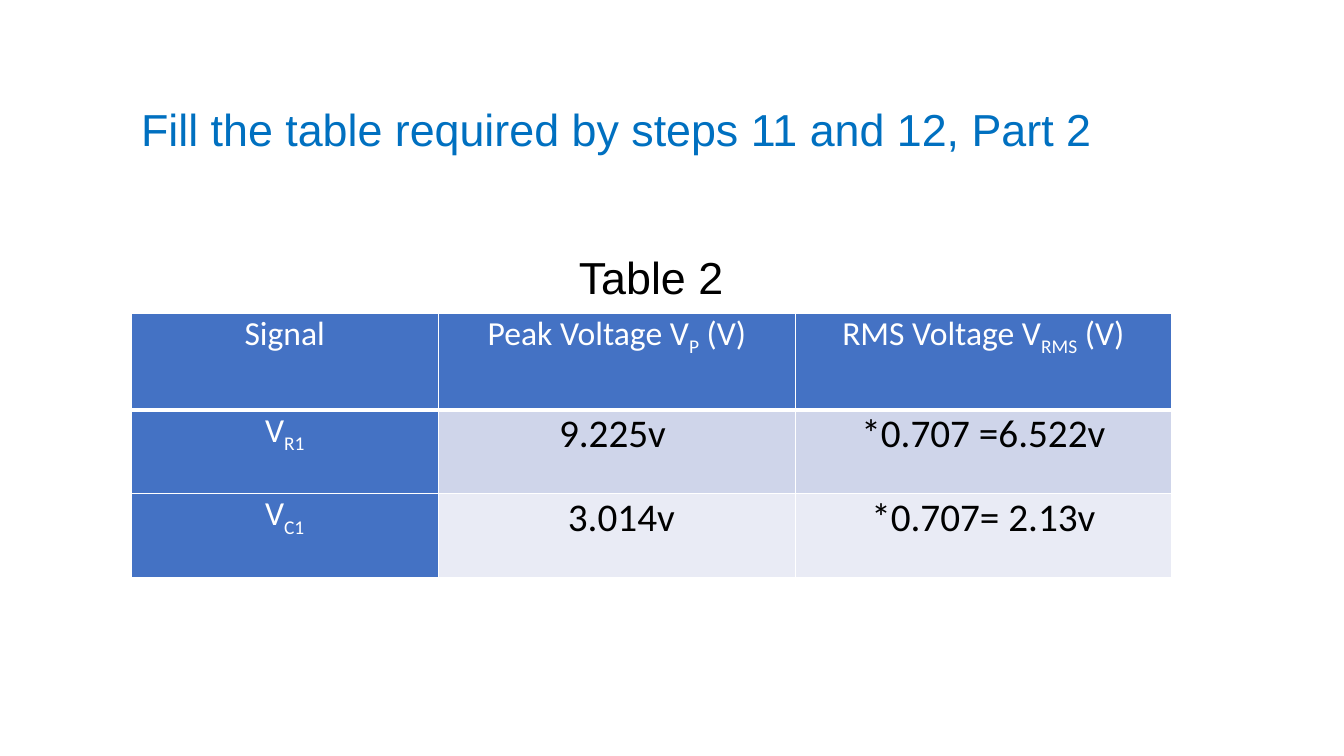
from lxml.etree import SubElement
from pptx import Presentation
from pptx.dml.color import RGBColor
from pptx.enum.text import MSO_ANCHOR, MSO_AUTO_SIZE, PP_ALIGN
from pptx.oxml.ns import qn
from pptx.util import Pt

WHITE = RGBColor(0xFF, 0xFF, 0xFF)
BLACK = RGBColor(0x00, 0x00, 0x00)
TITLE_BLUE = RGBColor(0x00, 0x70, 0xC0)
HEADER_BLUE = RGBColor(0x44, 0x72, 0xC4)
BAND_DARK = RGBColor(0xCF, 0xD5, 0xEA)
BAND_LIGHT = RGBColor(0xE9, 0xEB, 0xF5)

COLUMN_WIDTHS = (219.6, 254.9, 268.6)
ROW_HEIGHTS = (69.1, 59.8, 59.8)
READINGS = (
    (("Signal",), ("Peak Voltage V", "P", " (V)"), ("RMS Voltage V", "RMS", " (V)")),
    (("V", "R1"), ("9.225v ",), ("*0.707 =6.522v",)),
    (("V", "C1"), (" 3.014v",), ("*0.707= 2.13v",)),
)


def write(frame, *parts, size, color, font="Calibri", align=PP_ALIGN.CENTER, spacing=1.0):
    """Write one paragraph in which every second part is a subscript."""
    paragraph = frame.paragraphs[0]
    paragraph.alignment = align
    paragraph.line_spacing = spacing
    for index, part in enumerate(parts):
        run = paragraph.add_run()
        run.text = part
        run.font.size = Pt(size)
        run.font.name = font
        run.font.color.rgb = color
        if index % 2:
            run.font._element.set("baseline", "-25000")


def set_borders(cell, top, bottom):
    """Give a cell white borders, with the top and bottom widths in points."""
    properties = cell._tc.get_or_add_tcPr()
    for index, (side, width) in enumerate((("L", 1), ("R", 1), ("T", top), ("B", bottom))):
        border = SubElement(properties, qn(f"a:ln{side}"), w=str(Pt(width)))
        fill = SubElement(border, qn("a:solidFill"))
        SubElement(fill, qn("a:srgbClr"), val=str(WHITE))
        properties.insert(index, border)


def add_title(slide, left, top, width, height):
    """Place the slide title in the given box."""
    title = slide.shapes.title
    title.left, title.top, title.width, title.height = map(Pt, (left, top, width, height))
    frame = title.text_frame
    frame.auto_size = MSO_AUTO_SIZE.NONE
    frame.vertical_anchor = MSO_ANCHOR.MIDDLE
    write(frame, "Fill the table required by steps 11 and 12, Part 2", size=32,
          color=TITLE_BLUE, font="Arial", align=PP_ALIGN.LEFT, spacing=0.9)


def add_caption(slide, left, top, width, height):
    """Place the table caption in the given box."""
    caption = slide.shapes.add_textbox(Pt(left), Pt(top), Pt(width), Pt(height))
    frame = caption.text_frame
    frame.word_wrap = True
    frame.auto_size = MSO_AUTO_SIZE.SHAPE_TO_FIT_TEXT
    frame.vertical_anchor = MSO_ANCHOR.MIDDLE
    write(frame, "Table 2", size=32, color=BLACK, font="Arial")


def add_readings(slide, left, top):
    """Place the table of voltage readings with its corner at the given point."""
    table = slide.shapes.add_table(
        len(ROW_HEIGHTS), len(COLUMN_WIDTHS), Pt(left), Pt(top),
        Pt(sum(COLUMN_WIDTHS)), Pt(sum(ROW_HEIGHTS))).table
    table.first_row = table.horz_banding = False
    for column, width in zip(table.columns, COLUMN_WIDTHS):
        column.width = Pt(width)
    for row_index, (row, height) in enumerate(zip(table.rows, ROW_HEIGHTS)):
        row.height = Pt(height)
        for column_index, cell in enumerate(row.cells):
            heading = row_index == 0 or column_index == 0
            band = BAND_DARK if row_index == 1 else BAND_LIGHT
            cell.margin_left = cell.margin_right = Pt(5.04)
            cell.margin_top = cell.margin_bottom = 0
            cell.fill.solid()
            cell.fill.fore_color.rgb = HEADER_BLUE if heading else band
            set_borders(cell, 3 if row_index == 1 else 1, 3 if row_index == 0 else 1)
            write(cell.text_frame, *READINGS[row_index][column_index],
                  size=24 if heading else 28, color=WHITE if heading else BLACK)


def main():
    """Build and save the slide."""
    deck = Presentation()
    deck.slide_width, deck.slide_height = Pt(960), Pt(540)
    slide = deck.slides.add_slide(deck.slide_layouts[5])
    add_title(slide, 93.6, 55.4, 800.6, 77.8)
    add_readings(slide, 93.6, 223.9)
    add_caption(slide, 385.9, 174.2, 158.4, 46.1)
    deck.save("out.pptx")


if __name__ == "__main__":
    main()
